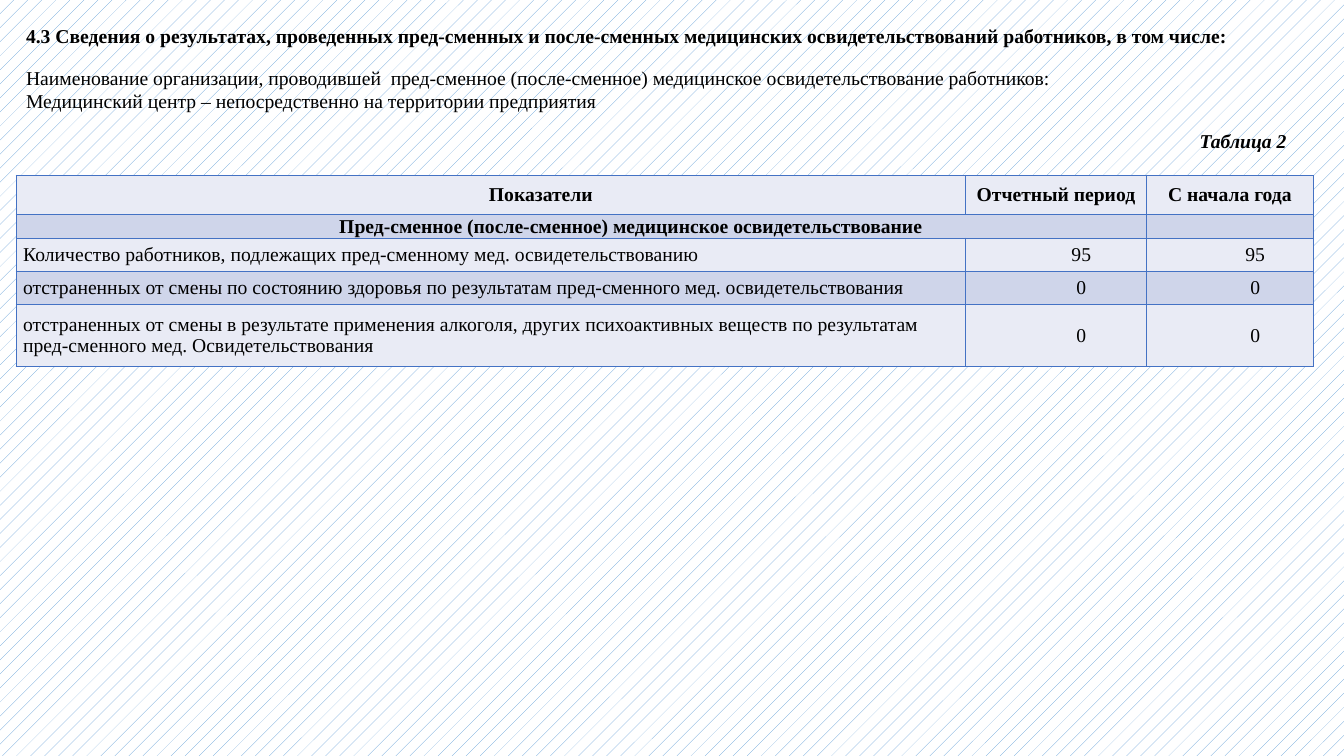
from dataclasses import dataclass

from lxml.etree import SubElement
from pptx import Presentation
from pptx.dml.color import RGBColor
from pptx.enum.dml import MSO_PATTERN
from pptx.enum.text import MSO_ANCHOR, MSO_AUTO_SIZE, PP_ALIGN
from pptx.oxml.ns import qn
from pptx.slide import Slide
from pptx.table import _Cell
from pptx.text.text import _Paragraph
from pptx.util import Inches, Pt


@dataclass(frozen=True)
class Theme:
    font: str = "Times New Roman"
    size: float = 14
    ink: str = "000000"
    border: str = "4472C4"
    border_width: float = 1
    bands: tuple[str, str] = ("E9EBF5", "CFD5EA")
    hatch: str = "5B9BD5"
    paper: str = "FFFFFF"


@dataclass(frozen=True)
class Caption:
    left: float
    top: float
    width: float
    height: float
    lines: tuple[str, ...]
    bold: bool = False
    italic: bool = False
    wrap: bool = False
    align: PP_ALIGN = PP_ALIGN.LEFT


@dataclass(frozen=True)
class CellStyle:
    align: PP_ALIGN = PP_ALIGN.CENTER
    bold: bool = False
    margin: float = 0
    indent: float = 0


@dataclass(frozen=True)
class Row:
    height: float
    texts: tuple[str, str, str]
    styles: tuple[CellStyle, CellStyle, CellStyle]


THEME = Theme()
TITLE = CellStyle(bold=True, margin=0.5, indent=0.49)
PERIOD = CellStyle(bold=True, margin=0.02, indent=-0.04)
INDICATOR = CellStyle(align=PP_ALIGN.LEFT)
COUNT = CellStyle(margin=0.5)
HEADER_STYLES = (TITLE, PERIOD, PERIOD)
RECORD_STYLES = (INDICATOR, COUNT, COUNT)

CAPTIONS = (
    Caption(0.16, 0.19, 12.34, 0.34,
            ("4.3 Сведения о результатах, проведенных пред-сменных и после-сменных "
             "медицинских освидетельствований работников, в том числе:",),
            bold=True, wrap=True, align=PP_ALIGN.JUSTIFY),
    Caption(0.16, 0.6, 10.5, 0.57,
            ("Наименование организации, проводившей  пред-сменное (после-сменное) "
             "медицинское освидетельствование работников:",
             "Медицинский центр – непосредственно на территории предприятия")),
    Caption(11.8, 1.23, 1.1, 0.34, ("Таблица 2",), bold=True, italic=True),
)

COLUMN_WIDTHS = (9.42, 1.79, 1.66)
SECTION_ROW = 1
ROWS = (
    Row(0.39, ("Показатели", "Отчетный период", "С начала года"), HEADER_STYLES),
    Row(0.18, ("Пред-сменное (после-сменное) медицинское освидетельствование", "", ""),
        HEADER_STYLES),
    Row(0.33, ("Количество работников, подлежащих пред-сменному мед. освидетельствованию",
               "95", "95"), RECORD_STYLES),
    Row(0.33, ("отстраненных от смены по состоянию здоровья по результатам "
               "пред-сменного мед. освидетельствования", "0", "0"), RECORD_STYLES),
    Row(0.61, ("отстраненных от смены в результате применения алкоголя, других "
               "психоактивных веществ по результатам пред-сменного мед. "
               "Освидетельствования", "0", "0"), RECORD_STYLES),
)


def style_paragraph(paragraph: _Paragraph, align: PP_ALIGN, bold: bool,
                    italic: bool = False) -> None:
    paragraph.alignment = align
    font = paragraph.font
    font.name = THEME.font
    font.size = Pt(THEME.size)
    font.bold = bold
    font.italic = italic
    font.color.rgb = RGBColor.from_string(THEME.ink)


def add_caption(slide: Slide, caption: Caption) -> None:
    box = slide.shapes.add_textbox(Inches(caption.left), Inches(caption.top),
                                   Inches(caption.width), Inches(caption.height))
    frame = box.text_frame
    frame.word_wrap = caption.wrap
    frame.auto_size = MSO_AUTO_SIZE.SHAPE_TO_FIT_TEXT
    frame.text = "\n".join(caption.lines)
    for paragraph in frame.paragraphs:
        style_paragraph(paragraph, caption.align, caption.bold, caption.italic)


def add_borders(cell: _Cell) -> None:
    properties = cell._tc.get_or_add_tcPr()
    for side in ("a:lnL", "a:lnR", "a:lnT", "a:lnB"):
        line = SubElement(properties, qn(side), w=str(Pt(THEME.border_width)))
        SubElement(SubElement(line, qn("a:solidFill")), qn("a:srgbClr"), val=THEME.border)


def fill_cell(cell: _Cell, text: str, style: CellStyle, band: str) -> None:
    add_borders(cell)
    cell.fill.solid()
    cell.fill.fore_color.rgb = RGBColor.from_string(band)
    cell.vertical_anchor = MSO_ANCHOR.MIDDLE
    cell.margin_left = cell.margin_right = Inches(0.07)
    cell.margin_top = cell.margin_bottom = 0
    cell.text = text
    paragraph = cell.text_frame.paragraphs[0]
    style_paragraph(paragraph, style.align, style.bold)
    properties = paragraph._p.get_or_add_pPr()
    properties.set("marL", str(Inches(style.margin)))
    properties.set("indent", str(Inches(style.indent)))
    if not text:
        SubElement(paragraph._p, qn("a:endParaRPr"), sz=str(int(THEME.size * 100)))


def add_results_table(slide: Slide) -> None:
    frame = slide.shapes.add_table(
        len(ROWS), len(COLUMN_WIDTHS), Inches(0.16), Inches(1.74),
        Inches(sum(COLUMN_WIDTHS)), Inches(sum(row.height for row in ROWS)))
    results = frame.table
    for column, width in zip(results.columns, COLUMN_WIDTHS):
        column.width = Inches(width)
    for index, row in enumerate(ROWS):
        results.rows[index].height = Inches(row.height)
        band = THEME.bands[index % 2]
        for column, (text, style) in enumerate(zip(row.texts, row.styles)):
            fill_cell(results.cell(index, column), text, style, band)
    results.cell(SECTION_ROW, 0).merge(results.cell(SECTION_ROW, 1))


def main() -> None:
    presentation = Presentation()
    presentation.slide_width = Inches(13.33)
    presentation.slide_height = Inches(7.5)
    slide = presentation.slides.add_slide(presentation.slide_layouts[6])
    backdrop = slide.background.fill
    backdrop.patterned()
    backdrop.pattern = MSO_PATTERN.PERCENT_5
    backdrop.fore_color.rgb = RGBColor.from_string(THEME.hatch)
    backdrop.back_color.rgb = RGBColor.from_string(THEME.paper)
    for caption in CAPTIONS:
        add_caption(slide, caption)
    add_results_table(slide)
    presentation.save("out.pptx")


if __name__ == "__main__":
    main()
